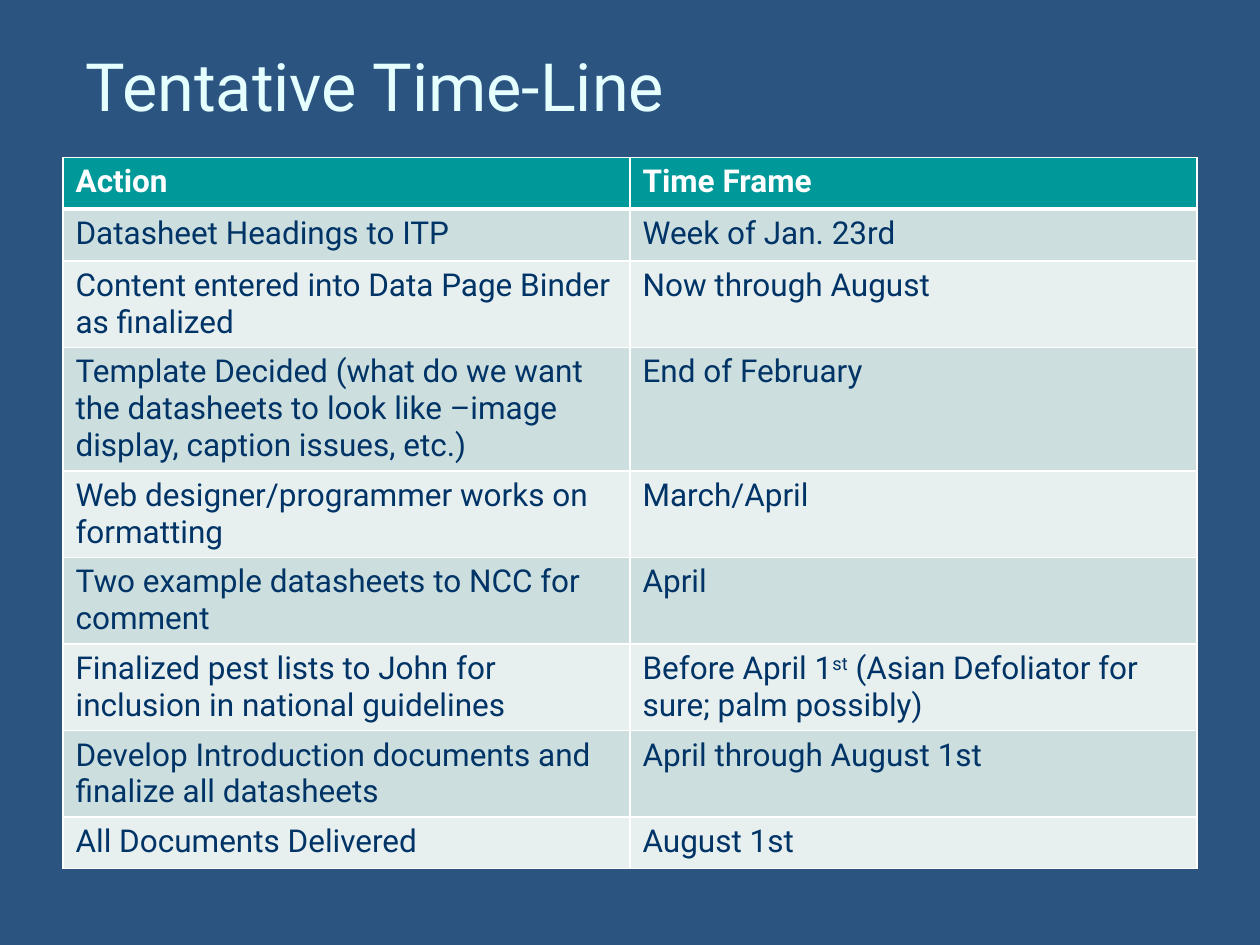
from lxml import etree
from pptx import Presentation
from pptx import util as u
from pptx.dml.color import RGBColor
from pptx.enum import text
from pptx.oxml.ns import qn

THEME = {
    "font": "Roboto",
    "title_size": 38,
    "body_size": 18,
    "background": "2B5481",
    "title": "E5FFFF",
    "header_fill": "009999",
    "header_text": "FFFFFF",
    "body_text": "003366",
    "bands": ("CCDEDE", "E7EFEF"),
    "border": "FFFFFF",
}

# Each cell is a list of runs; a run starting with "^" is superscript.
TIMELINE = [
    (["Action"], ["Time Frame"]),
    (["Datasheet Headings to ITP"], ["Week of Jan. 23rd"]),
    (["Content entered into Data Page Binder as finalized"], ["Now through August"]),
    (["Template Decided (what do we want the datasheets to look like –image display, "
      "caption issues, etc.)"], ["End of February"]),
    (["Web designer/programmer works on formatting"], ["March/April"]),
    (["Two example datasheets to NCC for comment"], ["April"]),
    (["Finalized pest lists to John for inclusion in national guidelines"],
     ["Before April 1", "^st", " (Asian Defoliator for sure; palm possibly)"]),
    (["Develop Introduction documents and finalize all datasheets"],
     ["April through August 1st"]),
    (["All Documents Delivered"], ["August 1st"]),
]


def add_run(paragraph, words, size, color, bold=False):
    """Add one run in the theme font; a leading "^" raises it."""
    run = paragraph.add_run()
    run.text = words.removeprefix("^")
    run.font.name = THEME["font"]
    run.font.size = u.Pt(size)
    run.font.bold = bold
    run.font.color.rgb = RGBColor.from_string(color)
    if words.startswith("^"):
        run.font._element.set("baseline", "30000")


def add_border(cell, side, points):
    properties = cell._tc.get_or_add_tcPr()
    line = etree.SubElement(properties, qn(f"a:ln{side}"), w=str(u.Pt(points)))
    fill = etree.SubElement(line, qn("a:solidFill"))
    etree.SubElement(fill, qn("a:srgbClr"), val=THEME["border"])


presentation = Presentation()
presentation.slide_width = u.Inches(10)
presentation.slide_height = u.Inches(7.5)
slide = presentation.slides.add_slide(presentation.slide_layouts[5])
slide.background.fill.solid()
slide.background.fill.fore_color.rgb = RGBColor.from_string(THEME["background"])

# Title
table_width = int(presentation.slide_width * 0.9)
title = slide.shapes.title
title.left, title.top = u.Inches(0.58), u.Inches(0.17)
title.width, title.height = table_width, u.Inches(1)
title.text_frame.auto_size = text.MSO_AUTO_SIZE.NONE
title.text_frame.vertical_anchor = text.MSO_ANCHOR.MIDDLE
paragraph = title.text_frame.paragraphs[0]
paragraph.alignment = text.PP_ALIGN.LEFT
add_run(paragraph, "Tentative Time-Line", THEME["title_size"], THEME["title"])

# Timeline table: rows start at one line and grow with their text
row_height = u.Inches(0.41)
table = slide.shapes.add_table(
    len(TIMELINE), 2, (presentation.slide_width - table_width) // 2, u.Inches(1.25),
    table_width, row_height * len(TIMELINE)).table

for row_index, row in enumerate(TIMELINE):
    table.rows[row_index].height = row_height
    is_header = row_index == 0
    fill_color = THEME["header_fill"] if is_header else THEME["bands"][(row_index - 1) % 2]
    text_color = THEME["header_text"] if is_header else THEME["body_text"]
    for column_index, runs in enumerate(row):
        cell = table.cell(row_index, column_index)
        for side in "LRTB":
            under_header = (row_index, side) in ((0, "B"), (1, "T"))
            add_border(cell, side, 3 if under_header else 1)
        cell.fill.solid()
        cell.fill.fore_color.rgb = RGBColor.from_string(fill_color)
        for words in runs:
            add_run(cell.text_frame.paragraphs[0], words, THEME["body_size"],
                    text_color, is_header)

presentation.save("out.pptx")
